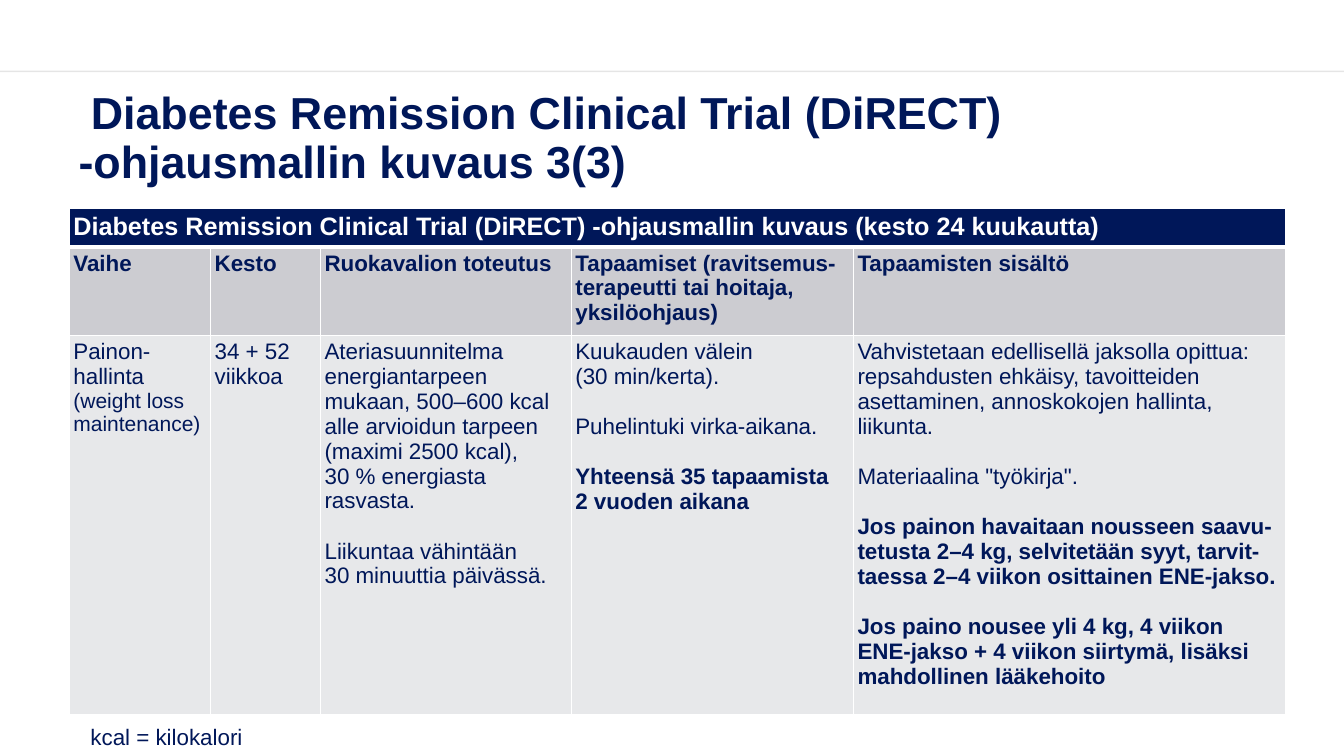
import pptx
import pptx.dml.color
import pptx.enum.shapes
import pptx.enum.text
import pptx.oxml
import pptx.oxml.ns
import pptx.util
from lxml import etree

Cm, Pt = pptx.util.Cm, pptx.util.Pt
NAVY, WHITE, HEADER_GREY, BODY_GREY = "001759", "FFFFFF", "CCCCD1", "E7E8EA"
FONT = "Arial"

COLUMN_WIDTHS = [3.56, 2.77, 6.32, 7.11, 10.88]
ROW_HEIGHTS = [0.81, 1.98, 8.64]
CAPTION = "Diabetes Remission Clinical Trial (DiRECT) -ohjausmallin kuvaus (kesto 24 kuukautta)"
HEADINGS = [
    "Vaihe",
    "Kesto",
    "Ruokavalion toteutus",
    "Tapaamiset (ravitsemus-\nterapeutti tai hoitaja, yksilöohjaus)",
    "Tapaamisten sisältö",
]
# Each cell is a list of (text, bold) paragraphs.
PHASE = [
    [("Painon-\nhallinta ", False)],
    [("34 + 52 viikkoa", False)],
    [
        ("Ateriasuunnitelma energiantarpeen mukaan, 500–600 kcal alle arvioidun tarpeen "
         "(maximi 2500 kcal),\n30 % energiasta rasvasta.", False),
        ("Liikuntaa vähintään\n30 minuuttia päivässä.", False),
    ],
    [
        ("Kuukauden välein\n(30 min/kerta).", False),
        ("Puhelintuki virka-aikana.", False),
        ("Yhteensä 35 tapaamista\n2 vuoden aikana", True),
    ],
    [
        ("Vahvistetaan edellisellä jaksolla opittua: repsahdusten ehkäisy, tavoitteiden "
         "asettaminen, annoskokojen hallinta, liikunta.", False),
        ('Materiaalina "työkirja".', False),
        ("Jos painon havaitaan nousseen saavu-tetusta 2–4 kg, selvitetään syyt, "
         "tarvit-taessa 2–4 viikon osittainen ENE-jakso.", True),
        ("Jos paino nousee yli 4 kg, 4 viikon ENE-jakso + 4 viikon siirtymä, lisäksi "
         "mahdollinen lääkehoito", True),
    ],
]
PHASE_ENGLISH = "(weight loss maintenance)"


def color(value):
    return pptx.dml.color.RGBColor.from_string(value)


def write(frame, paragraphs, size, ink=NAVY):
    """Fill a text frame with (text, bold) paragraphs, one line apart."""
    for index, (text, bold) in enumerate(paragraphs):
        para = frame.add_paragraph() if index else frame.paragraphs[0]
        para.text = text
        if index:
            para.space_before = Pt(18)
        para.font.name = FONT
        para.font.size = Pt(size)
        para.font.bold = bold
        para.font.color.rgb = color(ink)


def add_top_rule(page, width, top):
    rule = page.shapes.add_connector(
        pptx.enum.shapes.MSO_CONNECTOR.STRAIGHT, 0, top, width, top)
    rule.line.width = Pt(1)
    rule.line.color.rgb = color("000000")
    ink = rule.line._ln.find(".//" + pptx.oxml.ns.qn("a:srgbClr"))
    etree.SubElement(ink, pptx.oxml.ns.qn("a:alpha"), val="10000")
    etree.SubElement(rule._element.spPr, pptx.oxml.ns.qn("a:effectLst"))


def add_title(page, left, top, width, height):
    frame = page.shapes.add_textbox(left, top, width, height).text_frame
    frame.word_wrap = True
    frame.vertical_anchor = pptx.enum.text.MSO_ANCHOR.MIDDLE
    write(frame, [("Diabetes Remission Clinical Trial (DiRECT)\n-ohjausmallin kuvaus 3(3)", True)], 32)
    para = frame.paragraphs[0]
    para.line_spacing = 0.9
    para._p.get_or_add_pPr().set("indent", str(Cm(0.31)))


def set_borders(cell, **widths):
    """Draw white cell borders of the given widths in points, keyed by side."""
    properties = cell._tc.get_or_add_tcPr()
    for side in "LRTB":
        properties.append(pptx.oxml.parse_xml(
            f'<a:ln{side} {pptx.oxml.ns.nsdecls("a")} w="{Pt(widths.get(side, 1))}">'
            f'<a:solidFill><a:srgbClr val="{WHITE}"/></a:solidFill></a:ln{side}>'))


def style_cell(cell, fill, **borders):
    set_borders(cell, **borders)
    cell.fill.solid()
    cell.fill.fore_color.rgb = color(fill)
    cell.margin_left = cell.margin_right = cell.margin_top = cell.margin_bottom = Cm(0.1)


def add_phase_table(page, left, top):
    table = page.shapes.add_table(
        len(ROW_HEIGHTS), len(COLUMN_WIDTHS), left, top,
        Cm(sum(COLUMN_WIDTHS)), Cm(sum(ROW_HEIGHTS))).table
    table.first_row = table.horz_banding = False
    for column, width in zip(table.columns, COLUMN_WIDTHS):
        column.width = Cm(width)
    for row, height in zip(table.rows, ROW_HEIGHTS):
        row.height = Cm(height)

    table.cell(0, 0).merge(table.cell(0, len(COLUMN_WIDTHS) - 1))
    write(table.cell(0, 0).text_frame, [(CAPTION, True)], 18, WHITE)
    for index, (heading, paragraphs) in enumerate(zip(HEADINGS, PHASE)):
        caption, header, body = (table.cell(row, index) for row in range(3))
        style_cell(caption, NAVY, B=3)
        style_cell(header, HEADER_GREY, T=3)
        style_cell(body, BODY_GREY)
        write(header.text_frame, [(heading, True)], 16)
        write(body.text_frame, paragraphs, 16)

    span = table.cell(2, 0).text_frame.paragraphs[0].add_run()
    span.text = PHASE_ENGLISH
    span.font.size = Pt(15)


def add_abbreviation(page, left, top, width, height):
    frame = page.shapes.add_textbox(left, top, width, height).text_frame
    frame.word_wrap = False
    frame.auto_size = pptx.enum.text.MSO_AUTO_SIZE.SHAPE_TO_FIT_TEXT
    write(frame, [("kcal = kilokalori", False)], 16)


def main():
    deck = pptx.Presentation()
    deck.slide_width, deck.slide_height = Cm(33.87), Cm(19.05)
    page = deck.slides.add_slide(deck.slide_layouts[6])
    add_top_rule(page, deck.slide_width, Cm(1.8))
    add_title(page, Cm(1.73), Cm(2.36), Cm(30.33), Cm(2.31))
    add_phase_table(page, Cm(1.75), Cm(5.26))
    add_abbreviation(page, Cm(2.03), Cm(18.11), Cm(4.52), Cm(0.94))
    deck.save("out.pptx")


if __name__ == "__main__":
    main()
